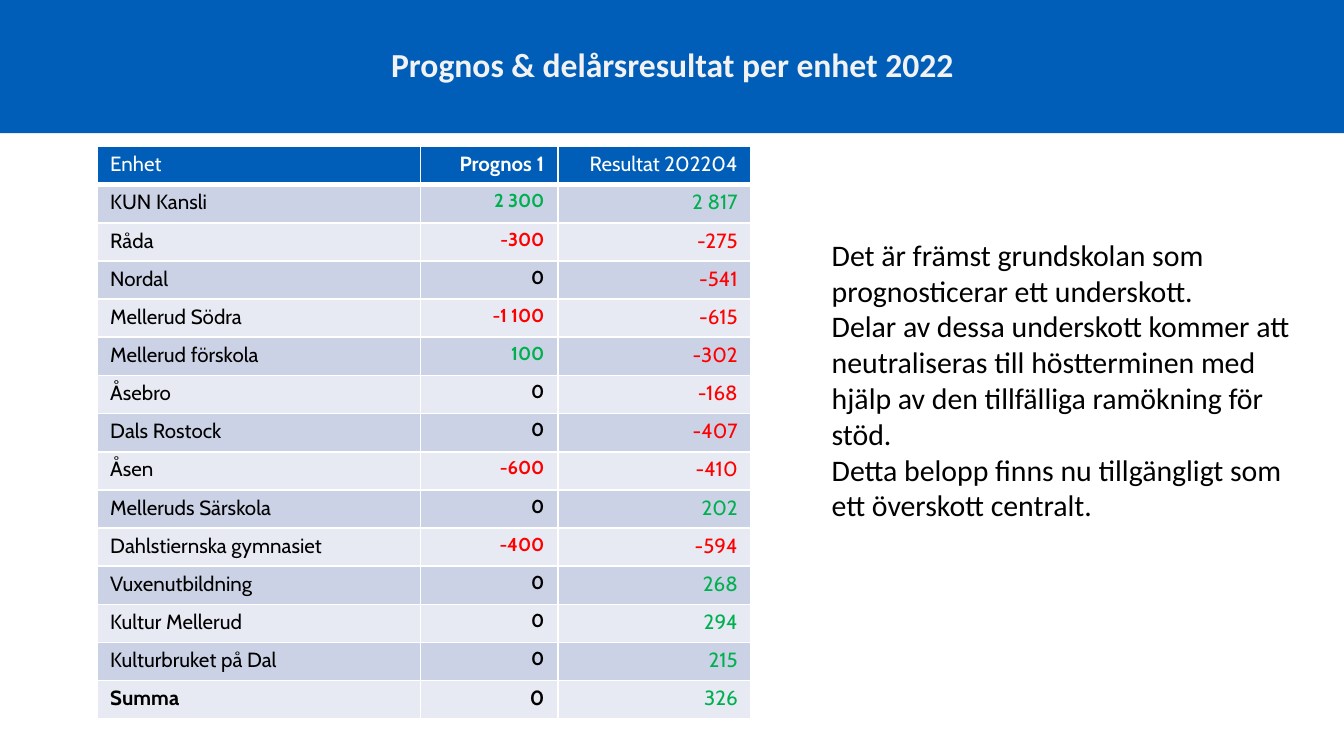
"""Build a slide with a forecast table per unit and a short comment."""
import pptx
import pptx.dml.color
import pptx.enum.shapes
import pptx.enum.text
import pptx.oxml
import pptx.oxml.ns
import pptx.util

Inches = pptx.util.Inches
Pt = pptx.util.Pt
ALIGN = pptx.enum.text.PP_ALIGN

COLORS = {
    "blue": "005EB8", "white": "FFFFFF", "title": "F2F2F2", "black": "000000",
    "dark_band": "CCD2E6", "light_band": "E7EAF3", "green": "00B050", "red": "FF0000",
}
TITLE = "Prognos & delårsresultat per enhet 2022"
HEADER = ("Enhet", "Prognos 1", "Resultat 202204")
UNITS = [
    ("KUN Kansli", "2 300", "2 817"),
    ("Råda", "-300", "-275"),
    ("Nordal", "0", "-541"),
    ("Mellerud Södra", "-1 100", "-615"),
    ("Mellerud förskola", "100", "-302"),
    ("Åsebro", "0", "-168"),
    ("Dals Rostock", "0", "-407"),
    ("Åsen", "-600", "-410"),
    ("Melleruds Särskola", "0", "202"),
    ("Dahlstiernska gymnasiet", "-400", "-594"),
    ("Vuxenutbildning", "0", "268"),
    ("Kultur Mellerud", "0", "294"),
    ("Kulturbruket på Dal", "0", "215"),
    ("Summa", "0", "326"),
]
COMMENT = [
    "Det är främst grundskolan som",
    "prognosticerar ett underskott.",
    "Delar av dessa underskott kommer att neutraliseras till höstterminen med "
    "hjälp av den tillfälliga ramökning för stöd.",
    "Detta belopp finns nu tillgängligt som ett överskott centralt.",
]
COLUMN_WIDTHS = (2.41, 1.02, 1.44)
TABLE_HEIGHT = 4.26


def rgb(name):
    return pptx.dml.color.RGBColor.from_string(COLORS[name])


def format_runs(paragraph, font_name, size, color, bold=False):
    for run in paragraph.runs:
        run.font.name = font_name
        run.font.size = Pt(size)
        run.font.bold = bold
        run.font.color.rgb = rgb(color)


def set_borders(cell, widths):
    properties = cell._tc.get_or_add_tcPr()
    for side, width in zip("LRTB", widths):
        properties.append(pptx.oxml.parse_xml(
            f'<a:ln{side} {pptx.oxml.ns.nsdecls("a")} w="{Pt(width)}"><a:solidFill>'
            f'<a:srgbClr val="{COLORS["white"]}"/></a:solidFill></a:ln{side}>'))


def value_color(text):
    if text == "0":
        return "black"
    return "red" if text.startswith("-") else "green"


def add_unit_table(slide):
    rows = [HEADER] + UNITS
    table = slide.shapes.add_table(
        len(rows), len(HEADER), Inches(0.72), Inches(1.09),
        Inches(sum(COLUMN_WIDTHS)), Inches(TABLE_HEIGHT)).table
    for column, width in zip(table.columns, COLUMN_WIDTHS):
        column.width = Inches(width)
    last = len(rows) - 1
    for row_index, values in enumerate(rows):
        table.rows[row_index].height = Inches(TABLE_HEIGHT / len(rows))
        is_header = row_index == 0
        band = "blue" if is_header else "dark_band" if row_index % 2 else "light_band"
        for column_index, value in enumerate(values):
            cell = table.cell(row_index, column_index)
            set_borders(cell, (1, 1, 3 if row_index == 1 else 1, 3 if is_header else 1))
            cell.fill.solid()
            cell.fill.fore_color.rgb = rgb(band)
            cell.margin_top = Inches(0.04)
            cell.margin_bottom = Inches(0.04)
            cell.text_frame.text = value
            paragraph = cell.text_frame.paragraphs[0]
            paragraph.alignment = ALIGN.RIGHT if column_index else ALIGN.LEFT
            is_forecast = column_index == 1
            size = 10 if is_forecast and 0 < row_index < last else 11
            color = "white" if is_header else value_color(value) if column_index else "black"
            bold = is_forecast or (row_index == last and column_index == 0)
            format_runs(paragraph, "Cabin", size, color, bold)


def main():
    presentation = pptx.Presentation()
    presentation.slide_width = Inches(10)
    presentation.slide_height = Inches(10 * 9 / 16)
    slide = presentation.slides.add_slide(presentation.slide_layouts[5])

    title = slide.shapes.title
    title.left, title.top, title.width, title.height = map(Inches, (2.81, 0.28, 4.4, 0.4))
    title.text_frame.text = TITLE
    title.text_frame.vertical_anchor = pptx.enum.text.MSO_ANCHOR.TOP
    title.text_frame.auto_size = pptx.enum.text.MSO_AUTO_SIZE.NONE
    title.text_frame.paragraphs[0].alignment = ALIGN.LEFT
    format_runs(title.text_frame.paragraphs[0], "Calibri", 18, "title", True)

    banner = slide.shapes.add_shape(
        pptx.enum.shapes.MSO_SHAPE.RECTANGLE, 0, 0, presentation.slide_width, Inches(0.99))
    banner.shadow.inherit = False
    banner.fill.solid()
    banner.fill.fore_color.rgb = rgb("blue")
    banner.line.fill.background()
    title.element.addprevious(banner.element)

    add_unit_table(slide)

    comment = slide.shapes.add_textbox(Inches(6.09), Inches(1.71), Inches(3.69), Inches(2.26))
    comment.text_frame.word_wrap = True
    comment.text_frame.text = "\n".join(COMMENT)
    for paragraph in comment.text_frame.paragraphs:
        format_runs(paragraph, "Calibri", 16, "black")

    presentation.save("out.pptx")


if __name__ == "__main__":
    main()
